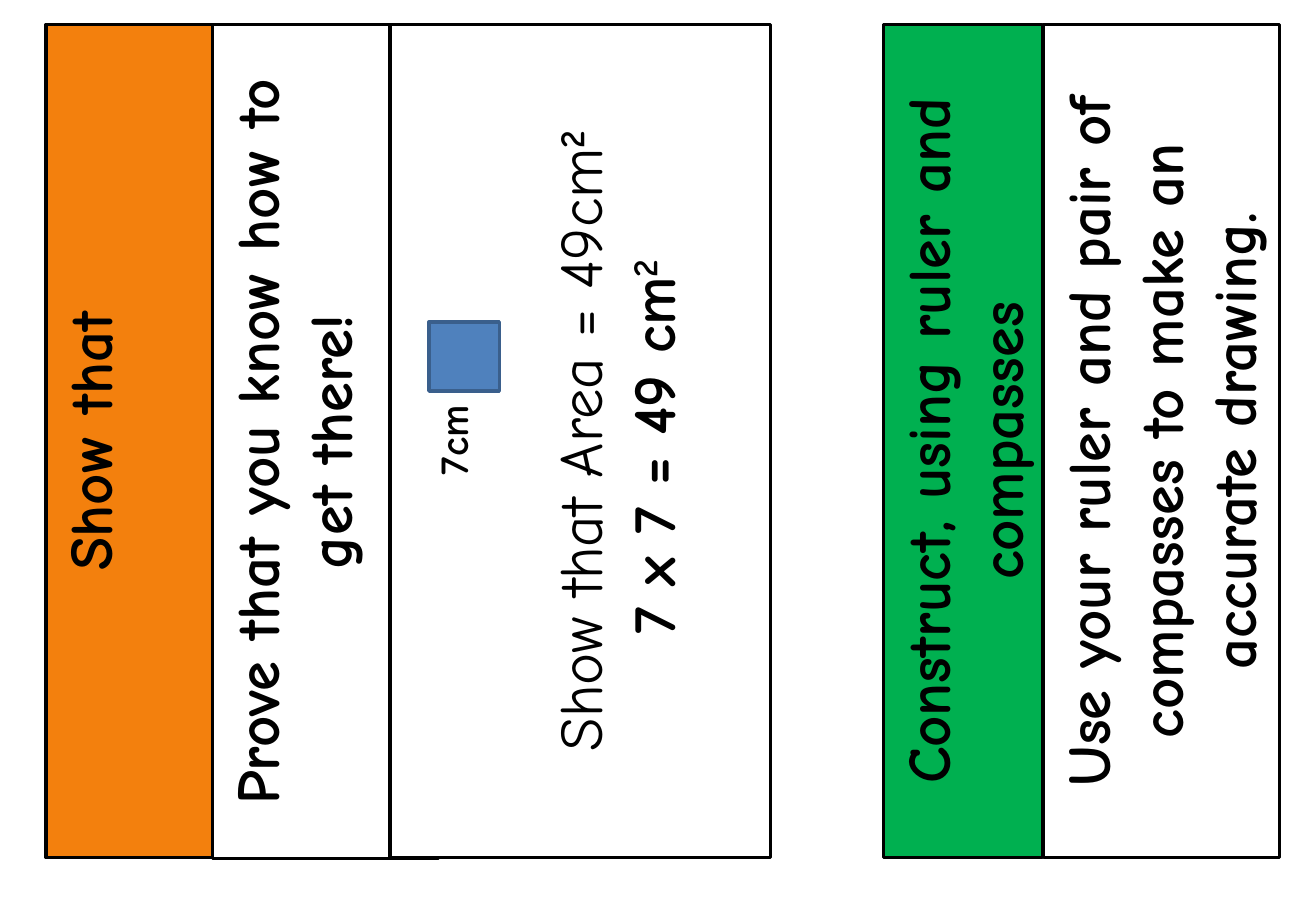
from pptx import Presentation
from pptx.dml.color import RGBColor
from pptx.enum.shapes import MSO_SHAPE
from pptx.enum.text import MSO_ANCHOR, MSO_AUTO_SIZE, PP_ALIGN
from pptx.util import Inches, Pt

RECTANGLE = MSO_SHAPE.RECTANGLE
TOP = MSO_ANCHOR.TOP
NO_AUTOFIT = MSO_AUTO_SIZE.NONE
CENTER, LEFT = PP_ALIGN.CENTER, PP_ALIGN.LEFT

FONT = "Comic Neue"
COLORS = {"black": "000000", "white": "FFFFFF", "orange": "F3800D",
          "green": "00B050", "blue": "4F81BD", "blue edge": "3A5F8C"}

# Each paragraph is a list of runs: (text, bold, superscript)
TITLE = [[("Show that", True, False)]]
MEANING = [[("Prove that you know how to get there!", True, False)]]
EXAMPLE = [
    [("Show that Area = 49cm", False, False), ("2", True, True)],
    [("7 x 7 = 49 cm", True, False), ("2 ", True, True)],
]
CONSTRUCT = [[("Construct, using ruler and compasses", True, False)]]
CONSTRUCT_MEANING = [[("Use your ruler and pair of compasses to make an "
                       "accurate drawing.", True, False)]]
SIDE_LABEL = [[("7cm", True, False)]]

# Panels as seen on the slide: left, width, length, fill, inset above text, text
TITLE_PANEL = (0.38, 1.37, 6.86, "orange", 0.05, TITLE)
PANELS = [
    (7.27, 1.31, 6.86, "green", 0.05, CONSTRUCT),
    (8.59, 1.94, 6.86, "white", 0.05, CONSTRUCT_MEANING),
    (1.75, 1.86, 6.87, "white", 0.05, MEANING),
    (3.21, 3.13, 6.86, "white", 1.25, EXAMPLE),
]
PANEL_TOP = 0.2


def color(name):
    return RGBColor.from_string(COLORS[name])


def paint(shape, fill, line):
    shape.fill.solid()
    shape.fill.fore_color.rgb = color(fill)
    shape.line.color.rgb = color(line)
    shape.line.width = Pt(2)


def write(shape, paragraphs, size, alignment, top_inset=0.05):
    frame = shape.text_frame
    frame.word_wrap = True
    frame.auto_size = NO_AUTOFIT
    frame.vertical_anchor = TOP
    frame.margin_left = frame.margin_right = Inches(0.1)
    frame.margin_top, frame.margin_bottom = Inches(top_inset), Inches(0.05)
    for index, runs in enumerate(paragraphs):
        paragraph = frame.add_paragraph() if index else frame.paragraphs[0]
        paragraph.alignment = alignment
        for text, bold, superscript in runs:
            run = paragraph.add_run()
            run.text = text
            run.font.name = FONT
            run.font.size = Pt(size)
            run.font.bold = bold
            run.font.color.rgb = color("black")
            if superscript:
                run.font._element.set("baseline", "30000")


def turn(shape, left, top, width, length):
    """Place a shape that reads upwards, given its visible bounds."""
    shape.left = Inches(left + (width - length) / 2)
    shape.top = Inches(top + (length - width) / 2)
    shape.width, shape.height = Inches(length), Inches(width)
    shape.rotation = 270


def fill_panel(shape, panel):
    left, width, length, fill, top_inset, paragraphs = panel
    turn(shape, left, PANEL_TOP, width, length)
    paint(shape, fill, "black")
    write(shape, paragraphs, 36, CENTER, top_inset)


def add_rectangle(shapes, left, top, width, height):
    shape = shapes.add_shape(RECTANGLE, Inches(left), Inches(top),
                             Inches(width), Inches(height))
    shape.shadow.inherit = False
    return shape


def main():
    presentation = Presentation()
    presentation.slide_width = Inches(10.83)
    presentation.slide_height = Inches(7.5)
    slide = presentation.slides.add_slide(presentation.slide_layouts[5])
    shapes = slide.shapes

    # Cards
    fill_panel(shapes.title, TITLE_PANEL)
    for panel in PANELS:
        fill_panel(add_rectangle(shapes, 0, 0, 1, 1), panel)

    # Square with its side length
    square = add_rectangle(shapes, 3.53, 2.65, 0.58, 0.57)
    paint(square, "blue", "blue edge")
    label = shapes.add_textbox(0, 0, 0, 0)
    turn(label, 3.47, 2.4, 0.5, 1.61)
    write(label, SIDE_LABEL, 24, LEFT)

    presentation.save("out.pptx")


if __name__ == "__main__":
    main()
